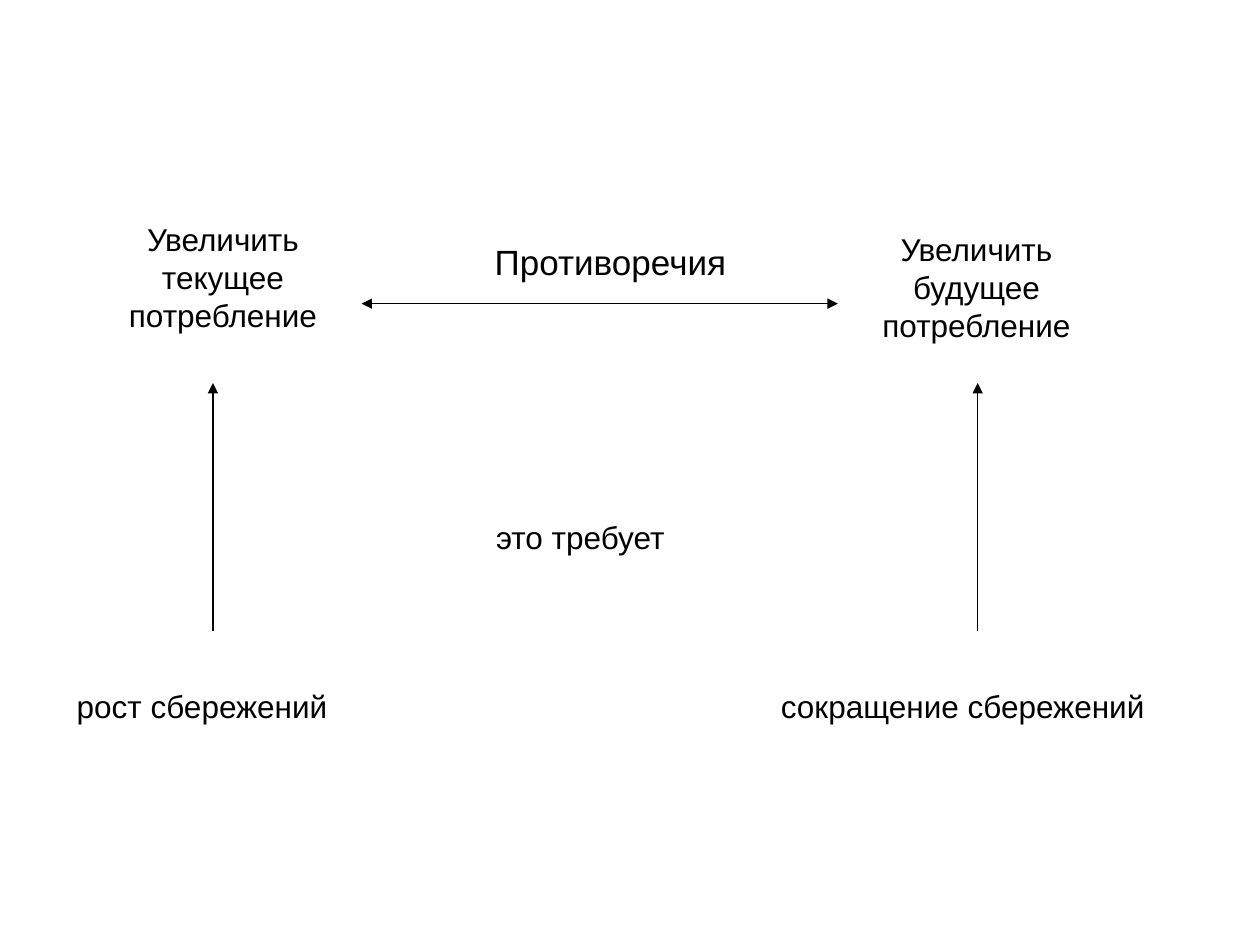
from lxml import etree
from pptx import Presentation
from pptx.dml.color import RGBColor
from pptx.enum.shapes import MSO_CONNECTOR
from pptx.enum.text import MSO_AUTO_SIZE, PP_ALIGN
from pptx.oxml.ns import qn
from pptx.util import Inches, Pt

STRAIGHT = MSO_CONNECTOR.STRAIGHT
LEFT, CENTER = PP_ALIGN.LEFT, PP_ALIGN.CENTER
GROW = MSO_AUTO_SIZE.SHAPE_TO_FIT_TEXT
FONT, INK = "Arial", "000000"

# Labels: text, (left, top, width, height), size, alignment
LABELS = [
    ("Противоречия", (0.75, 1.86, 8.19, 0.43), 20, CENTER),
    ("Увеличить текущее потребление", (0.59, 1.7, 2.36, 1), 18, CENTER),
    ("Увеличить будущее потребление", (6.57, 1.78, 2.36, 1), 18, CENTER),
    ("это требует", (2.4, 4.06, 4.41, 0.4), 18, CENTER),
    ("рост сбережений", (0.51, 5.4, 2.52, 0.4), 18, LEFT),
    ("сокращение сбережений", (6.1, 5.4, 3.23, 0.4), 18, LEFT),
]

# Arrows: start, end, ends that carry a head
ARROWS = [((2.87, 2.41), (6.65, 2.41), ("headEnd", "tailEnd"))]
ARROWS += [((x, 5.01), (x, 3.04), ("tailEnd",)) for x in (1.69, 7.76)]


def color(value):
    return RGBColor.from_string(value)


def add_label(page, text, place, size, align):
    box = page.shapes.add_textbox(*map(Inches, place))
    frame = box.text_frame
    frame.word_wrap = True
    frame.auto_size = GROW
    para = frame.paragraphs[0]
    para.alignment = align
    span = para.add_run()
    span.text = text
    span.font.name = FONT
    span.font.size = Pt(size)
    span.font.color.rgb = color(INK)


def add_arrow(page, start, end, heads):
    arrow = page.shapes.add_connector(STRAIGHT, *map(Inches, start + end))
    arrow.line.color.rgb = color(INK)
    arrow.line.width = Pt(0.75)
    outline = arrow.line._get_or_add_ln()
    for head in heads:
        etree.SubElement(outline, qn(f"a:{head}"), type="triangle")
    # An empty effect list switches the shadow off
    etree.SubElement(arrow._element.spPr, qn("a:effectLst"))


def main():
    deck = Presentation()
    deck.slide_width, deck.slide_height = Inches(10), Inches(7.5)
    page = deck.slides.add_slide(deck.slide_layouts[6])
    for label in LABELS:
        add_label(page, *label)
    for arrow in ARROWS:
        add_arrow(page, *arrow)
    deck.save("out.pptx")


if __name__ == "__main__":
    main()
